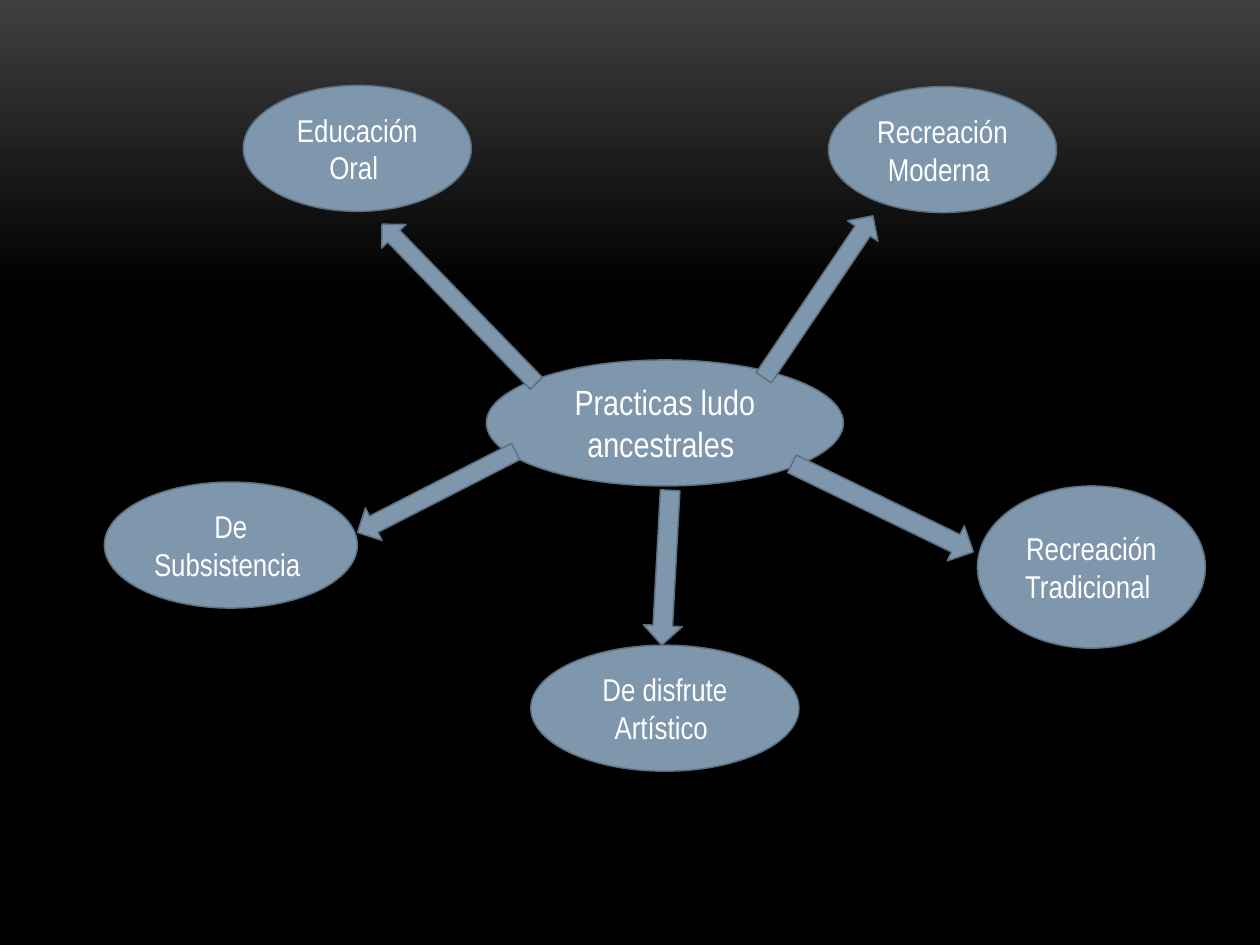
from pptx import Presentation
from pptx.dml.color import RGBColor
from pptx.enum.shapes import MSO_SHAPE as Preset
from pptx.enum.text import MSO_ANCHOR as Anchor, PP_ALIGN as Align
from pptx.util import Pt


def color(hex_string):
    return RGBColor.from_string(hex_string)


def add_blue_shape(preset, left, top, width, height):
    shape = slide.shapes.add_shape(preset, Pt(left), Pt(top), Pt(width), Pt(height))
    shape.shadow.inherit = False
    shape.fill.solid()
    shape.fill.fore_color.rgb = color("7E97AD")
    shape.line.color.rgb = color("5D7080")
    shape.line.width = Pt(0.85)
    return shape


presentation = Presentation()
presentation.slide_width = Pt(720)
presentation.slide_height = Pt(540)
slide = presentation.slides.add_slide(presentation.slide_layouts[6])

# Background: dark grey fading down to black
background = slide.background.fill
background.gradient()
background.gradient_angle = 270
for stop, position, shade in zip(background.gradient_stops, (0, 0.31), ("3F3F3F", "000000")):
    stop.position = position
    stop.color.rgb = color(shade)

# Central topic and its five branches: text, font size, left, top, width, height
topics = [
    ("Practicas ludo ancestrales ", 20, 277.9, 205.7, 204, 72),
    ("Recreación Tradicional ", 18, 558.5, 277.7, 130.3, 92.7),
    ("De Subsistencia ", 18, 59.6, 275.5, 144.6, 72),
    ("Educación Oral ", 18, 139, 48.8, 130.3, 72),
    ("Recreación Moderna ", 18, 473.4, 49.5, 130.3, 72),
    ("De disfrute Artístico ", 18, 303.3, 368.7, 153.2, 72),
]
for text, size, *box in topics:
    ellipse = add_blue_shape(Preset.OVAL, *box)
    text_frame = ellipse.text_frame
    text_frame.word_wrap = True
    text_frame.vertical_anchor = Anchor.MIDDLE
    text_frame.text = text
    paragraph = text_frame.paragraphs[0]
    paragraph.alignment = Align.CENTER
    font = paragraph.runs[0].font
    font.name = "Arial Narrow"
    font.size = Pt(size)
    font.color.rgb = color("FFFFFF")

# Arrows from the centre outwards: left, top, width, height, rotation
arrows = [
    (252.7, 110.2, 19.4, 126.7, 315.9),
    (457.2, 113.8, 20.9, 111.6, 34),
    (239, 230.4, 20.9, 101.5, 242.9),
    (369.4, 280.1, 22.3, 88.6, 183.1),
    (493.2, 232.6, 22.3, 115.2, 115.9),
]
for *box, rotation in arrows:
    arrow = add_blue_shape(Preset.UP_ARROW, *box)
    arrow.rotation = rotation

presentation.save("out.pptx")
